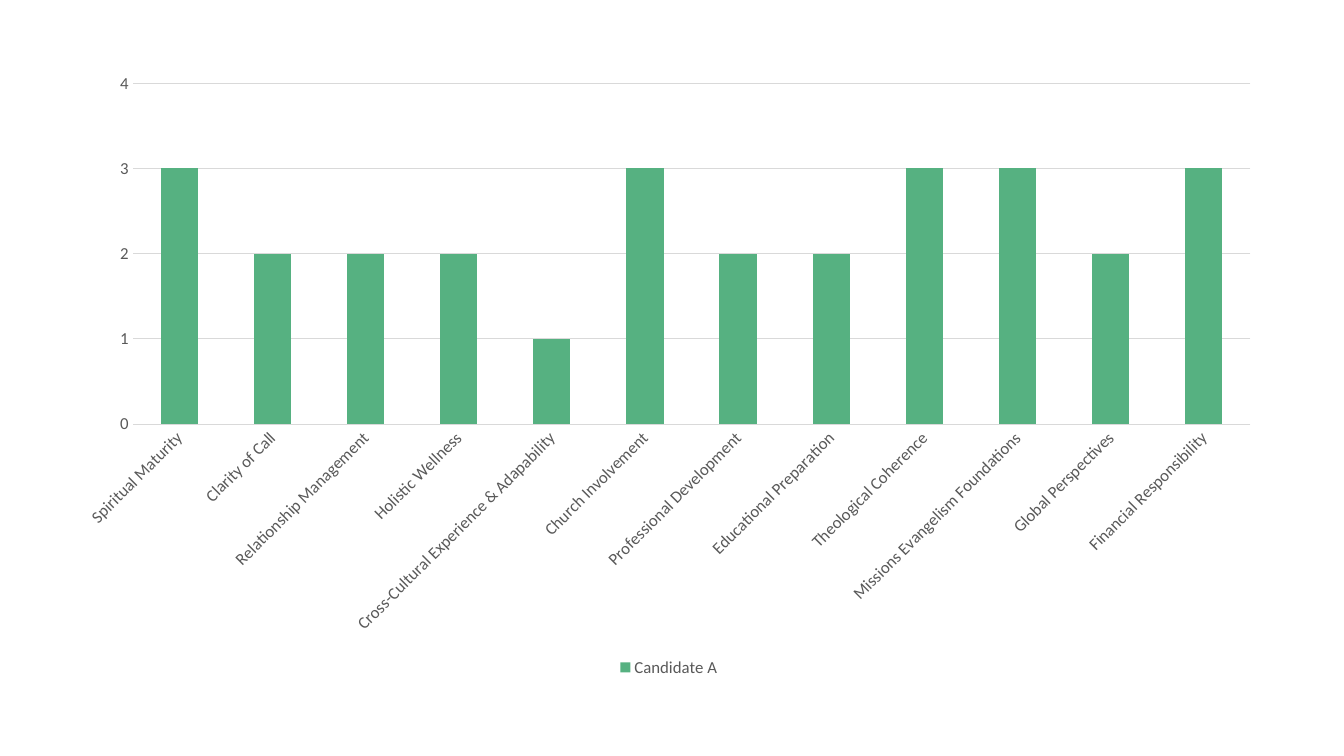
from pptx import Presentation
from pptx.chart.data import CategoryChartData
from pptx.dml.color import RGBColor
from pptx.enum.chart import XL_CHART_TYPE, XL_LEGEND_POSITION, XL_TICK_MARK
from pptx.util import Pt

PX = 9525
WIDE, HIGH = 1280, 720
COLORS = {"bar": "56B181", "text": "595959", "grid": "D9D9D9"}
FONT = {"name": "Calibri", "size": Pt(12), "bold": False}
AXIS = {"major_tick_mark": XL_TICK_MARK.NONE, "minor_tick_mark": XL_TICK_MARK.NONE}
SCALE = {"minimum_scale": 0, "maximum_scale": 4, "major_unit": 1}
LEGEND = {"position": XL_LEGEND_POSITION.BOTTOM, "include_in_layout": False}
SCORES = {
    "Spiritual Maturity": 3,
    "Clarity of Call": 2,
    "Relationship Management": 2,
    "Holistic Wellness": 2,
    "Cross-Cultural Experience & Adapability": 1,
    "Church Involvement": 3,
    "Professional Development": 2,
    "Educational Preparation": 2,
    "Theological Coherence": 3,
    "Missions Evangelism Foundations": 3,
    "Global Perspectives": 2,
    "Financial Responsibility": 3,
}


def apply(target, values):
    for name, value in values.items():
        setattr(target, name, value)


class Deck:
    def __init__(self):
        self.show = Presentation()
        apply(self.show, {"slide_width": WIDE * PX, "slide_height": HIGH * PX})
        self.slide = self.show.slides.add_slide(self.show.slide_layouts[6])

    def color(self, name):
        return RGBColor.from_string(COLORS[name])

    def font(self, font):
        apply(font, FONT)
        font.color.rgb = self.color("text")

    def axis(self, axis):
        apply(axis, AXIS)
        axis.format.line.fill.background()
        self.font(axis.tick_labels.font)

    def columns(self, box, title, scores):
        data = CategoryChartData(number_format="General")
        data.categories = list(scores)
        data.add_series(title, list(scores.values()))
        frame = self.slide.shapes.add_chart(
            XL_CHART_TYPE.COLUMN_CLUSTERED, *(n * PX for n in box), data)
        chart = frame.chart
        apply(chart, {"has_title": False, "has_legend": True})
        self.font(chart.font)
        apply(chart.legend, LEGEND)
        self.font(chart.legend.font)

        for axis in (chart.category_axis, chart.value_axis):
            self.axis(axis)
        # Slant the category names upward by 45 degrees
        body = chart.category_axis.tick_labels.font._element.getparent().getparent().getparent().bodyPr
        body.set("rot", "-2700000")
        apply(chart.value_axis, SCALE)
        grid = chart.value_axis.major_gridlines.format.line
        grid.color.rgb = self.color("grid")
        grid.width = Pt(0.75)

        plot = chart.plots[0]
        apply(plot, {"gap_width": 150, "vary_by_categories": False})
        fill = plot.series[0].format.fill
        fill.solid()
        fill.fore_color.rgb = self.color("bar")


def main():
    deck = Deck()
    deck.columns((60, 58, 1154, 591), "Candidate A", SCORES)
    deck.show.save("out.pptx")


if __name__ == "__main__":
    main()
